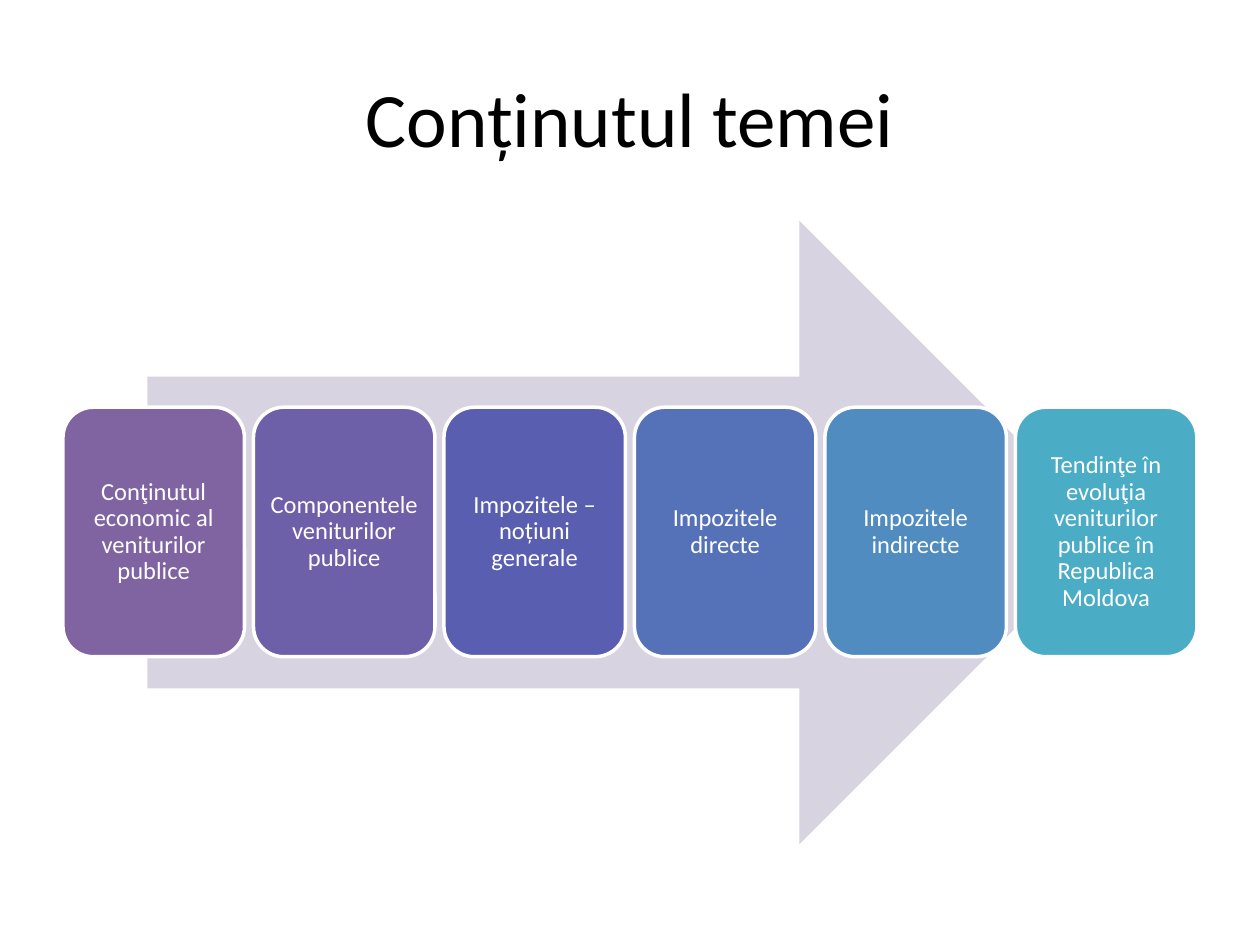
from pptx import Presentation
from pptx.dml.color import RGBColor
from pptx.enum.shapes import MSO_SHAPE
from pptx.enum.text import MSO_ANCHOR, PP_ALIGN
from pptx.util import Cm, Pt

TITLE = "Conținutul temei"
TOPICS = [
    ("Conţinutul economic al veniturilor publice", "8064A2"),
    ("Componentele veniturilor publice", "6E5FA9"),
    ("Impozitele – noțiuni generale", "5A5EB1"),
    ("Impozitele directe", "5572B8"),
    ("Impozitele indirecte", "508CBF"),
    ("Tendinţe în evoluţia veniturilor publice în Republica Moldova", "4BACC6"),
]
FONT = "Calibri"
CARD_LEFT, CARD_TOP, CARD_WIDTH, CARD_HEIGHT = 1.27, 8.21, 3.66, 5.03
CARD_PITCH = 3.84
CARD_INSET = Cm(0.15)


def paint(color_format, color):
    color_format.rgb = RGBColor.from_string(color)


def write(frame, text, size, color):
    frame.word_wrap = True
    frame.vertical_anchor = MSO_ANCHOR.MIDDLE
    paragraph = frame.paragraphs[0]
    paragraph.alignment = PP_ALIGN.CENTER
    run = paragraph.add_run()
    run.text = text
    run.font.name = FONT
    run.font.size = Pt(size)
    paint(run.font.color, color)
    return paragraph


def add_filled(shapes, preset, box, color):
    shape = shapes.add_shape(preset, *map(Cm, box))
    shape.shadow.inherit = False
    shape.fill.solid()
    paint(shape.fill.fore_color, color)
    return shape


def add_card(shapes, position, topic, color):
    box = (CARD_LEFT + position * CARD_PITCH, CARD_TOP, CARD_WIDTH, CARD_HEIGHT)
    card = add_filled(shapes, MSO_SHAPE.ROUNDED_RECTANGLE, box, color)
    card.line.width = Pt(2)
    paint(card.line.color, "FFFFFF")
    frame = card.text_frame
    frame.margin_left = frame.margin_right = CARD_INSET
    frame.margin_top = frame.margin_bottom = CARD_INSET
    write(frame, topic, 14, "FFFFFF").line_spacing = 0.9


def main():
    """Build the slide that lists the topics along an arrow."""
    deck = Presentation()
    deck.slide_width, deck.slide_height = Cm(25.4), Cm(19.05)
    slide = deck.slides.add_slide(deck.slide_layouts[5])

    title = slide.shapes.title
    title.left, title.top, title.width, title.height = map(Cm, (1.27, 0.76, 22.86, 3.18))
    write(title.text_frame, TITLE, 44, "000000")

    process = slide.shapes.add_group_shape().shapes
    arrow = add_filled(process, MSO_SHAPE.RIGHT_ARROW, (2.97, 4.45, 19.43, 12.57), "D8D3E0")
    arrow.line.fill.background()
    for position, (topic, color) in enumerate(TOPICS):
        add_card(process, position, topic, color)

    deck.save("out.pptx")


if __name__ == "__main__":
    main()
